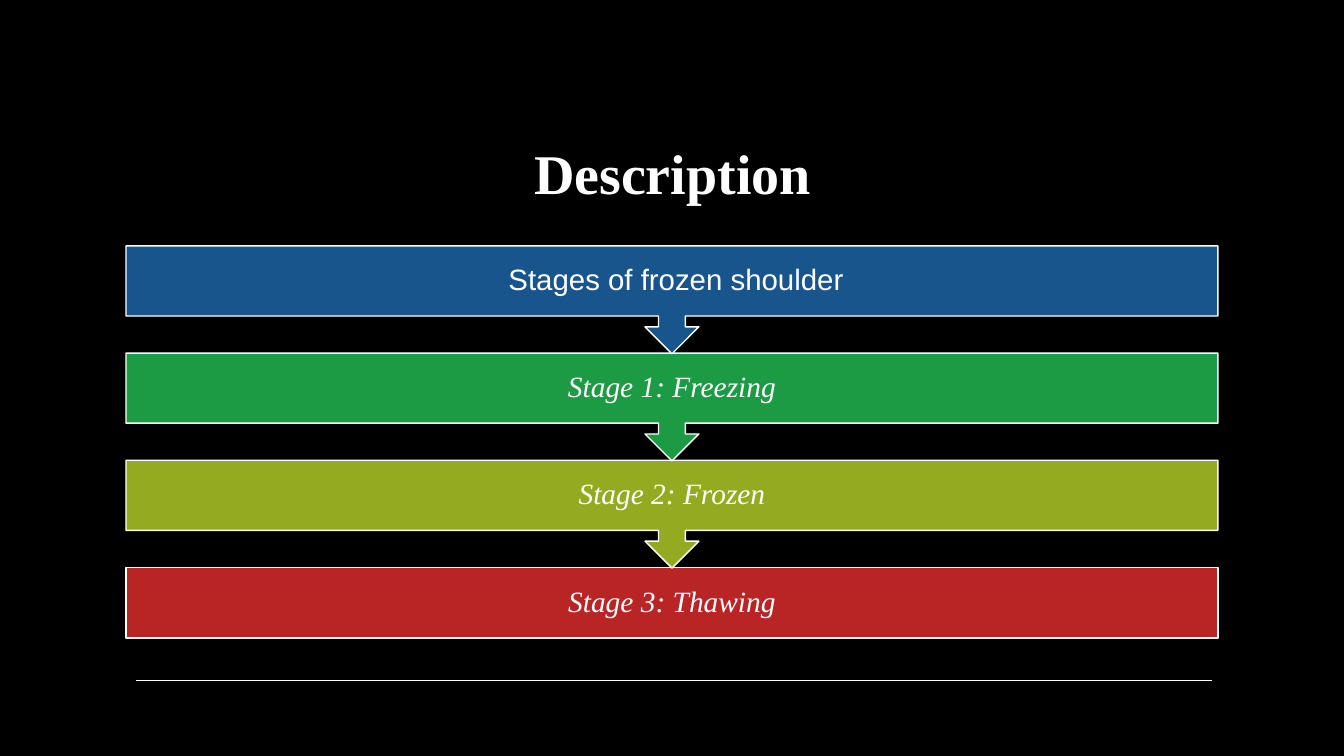
from pptx import Presentation
from pptx import util as u
from pptx.dml.color import RGBColor
from pptx.enum import shapes, text

BLACK = RGBColor(0x00, 0x00, 0x00)
WHITE = RGBColor(0xFF, 0xFF, 0xFF)
BLUE = RGBColor(0x18, 0x55, 0x8C)
GREEN = RGBColor(0x1C, 0x9B, 0x44)
OLIVE = RGBColor(0x94, 0xAA, 0x20)
RED = RGBColor(0xB9, 0x25, 0x25)

SERIF = "Times New Roman"
TOP, LAST = 2.44, 5.63
BAR, CALLOUT = 0.7, 1.07


def write(frame, words, **font):
    frame.word_wrap = True
    para = frame.paragraphs[0]
    para.alignment = text.PP_ALIGN.CENTER
    run = para.add_run()
    run.text = words
    run.font.color.rgb = WHITE
    for key, value in font.items():
        setattr(run.font, key, value)
    return para


deck = Presentation()
deck.slide_width = u.Inches(13.33)
deck.slide_height = u.Inches(7.5)
slide = deck.slides.add_slide(deck.slide_layouts[5])
slide.background.fill.solid()
slide.background.fill.fore_color.rgb = BLACK

title = slide.shapes.title
place = {"left": 1.92, "top": 0.99, "width": 9.5, "height": 1.1}
for key, value in place.items():
    setattr(title, key, u.Inches(value))
title.text_frame.vertical_anchor = text.MSO_ANCHOR.BOTTOM
write(title.text_frame, "Description", name=SERIF, size=u.Pt(40), bold=True)

rule = slide.shapes.add_connector(
    shapes.MSO_CONNECTOR.STRAIGHT,
    u.Inches(1.35), u.Inches(6.75), u.Inches(12.02), u.Inches(6.75))
rule.line.color.rgb = WHITE
rule.line.width = u.Pt(1)
rule._element.spPr.append(
    rule._element.makeelement(
        "{http://schemas.openxmlformats.org/drawingml/2006/main}effectLst", {}))

stages = [
    (" Stages of frozen shoulder", BLUE, "Arial", False),
    ("Stage 1: Freezing", GREEN, SERIF, True),
    ("Stage 2: Frozen", OLIVE, SERIF, True),
    ("Stage 3: Thawing", RED, SERIF, True),
]
end = len(stages) - 1
step = (LAST - TOP) / end

# Bottom bar first, so that each arrow tip lies over the bar below it
for row in range(end, -1, -1):
    words, color, face, slant = stages[row]
    if row == end:
        kind, height = shapes.MSO_SHAPE.RECTANGLE, BAR
    else:
        kind, height = shapes.MSO_SHAPE.DOWN_ARROW_CALLOUT, CALLOUT
    bar = slide.shapes.add_shape(
        kind, u.Inches(1.25), u.Inches(TOP + row * step),
        u.Inches(10.83), u.Inches(height))
    bar.shadow.inherit = False
    bar.fill.solid()
    bar.fill.fore_color.rgb = color
    bar.line.color.rgb = WHITE
    bar.line.width = u.Pt(1)
    frame = bar.text_frame
    frame.vertical_anchor = text.MSO_ANCHOR.MIDDLE
    for side in ("left", "top", "right", "bottom"):
        setattr(frame, "margin_" + side, u.Inches(0.16))
    para = write(frame, words, name=face, size=u.Pt(21), italic=slant)
    para.line_spacing = 0.9

deck.save("out.pptx")
